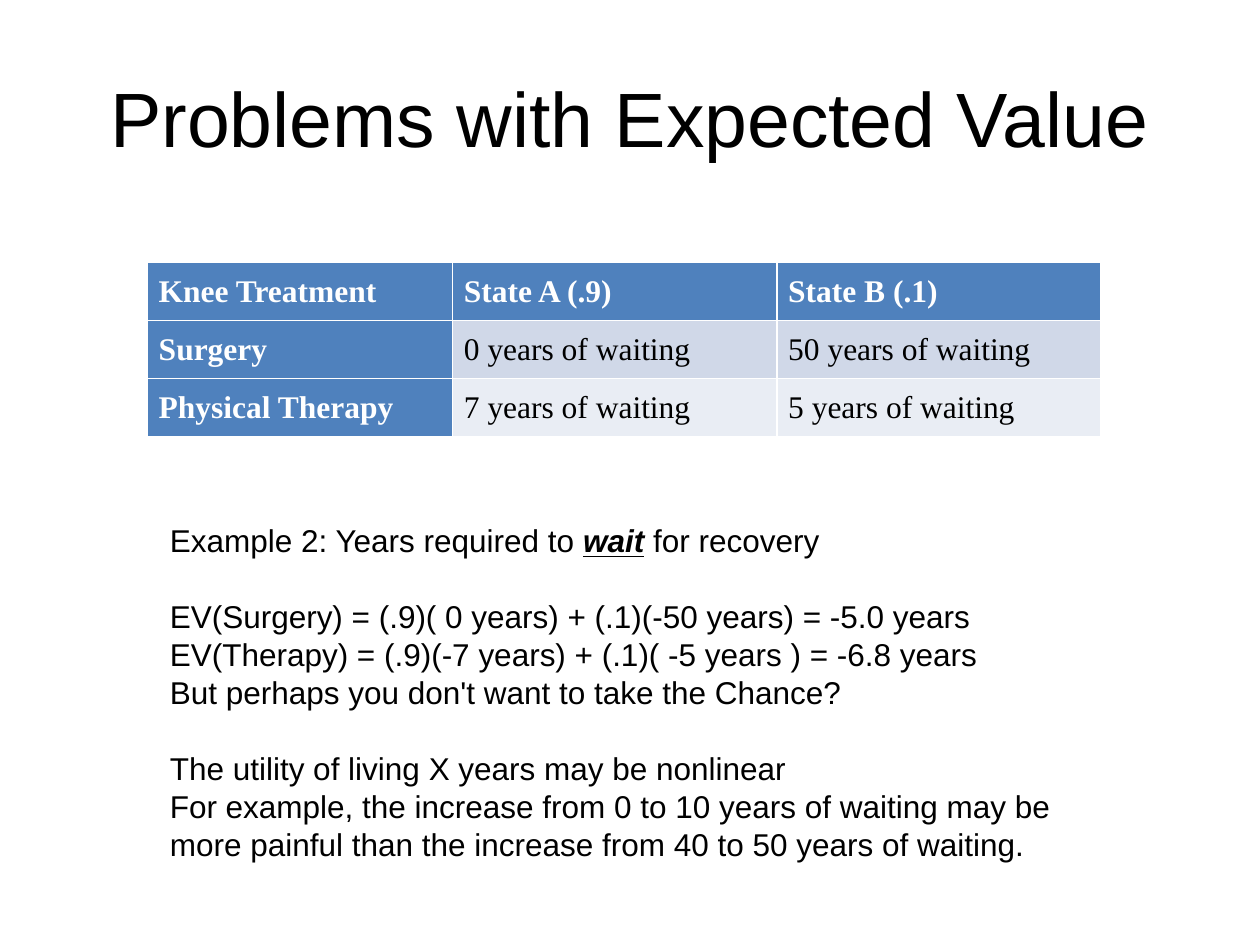
from dataclasses import dataclass

from pptx import Presentation
from pptx import util as u
from pptx.dml import color
from pptx.enum import text


@dataclass(frozen=True)
class Theme:
    ink: str = "000000"
    light: str = "FFFFFF"
    accent: str = "4F81BD"
    bands: tuple = ("D0D8E8", "E9EDF4")
    sans: str = "Arial"
    serif: str = "Times New Roman"
    title_size: int = 44
    text_size: int = 18
    line_height: float = 21.7


THEME = Theme()
WIDTH, HEIGHT = u.Inches(10), u.Inches(7.5)

TREATMENTS = [
    ["Knee Treatment", "State A (.9)", "State B (.1)"],
    ["Surgery", "0 years of waiting", "50 years of waiting"],
    ["Physical Therapy", "7 years of waiting", "5 years of waiting"],
]
COLUMN_SHARES = (0.32, 0.34, 0.34)

ARGUMENT = [
    [["Example 2: Years required to ", ("wait", {"bold": True, "italic": True, "underline": True}),
      " for recovery"]],
    [["EV(Surgery) = (.9)( 0 years) + (.1)(-50 years) = -5.0 years"],
     ["EV(Therapy) = (.9)(-7 years) + (.1)( -5 years ) = -6.8 years"],
     ["But perhaps you don't want to take the Chance?"]],
    [["The utility of living X years may be nonlinear"],
     ["For example, the increase from 0 to 10 years of waiting may be"],
     ["more painful than the increase from 40 to 50 years of waiting."]],
]


def area(left, top, width, height):
    return (int(left * WIDTH), int(top * HEIGHT), int(width * WIDTH), int(height * HEIGHT))


def apply(target, values):
    for name, value in values.items():
        setattr(target, name, value)


def write(para, words, ink, **values):
    span = para.add_run()
    span.text = words
    apply(span.font, values)
    span.font.color.rgb = color.RGBColor.from_string(ink)


def fill_title(page, box):
    title = page.shapes.title
    apply(title, dict(zip(("left", "top", "width", "height"), box)))
    title.text_frame.vertical_anchor = text.MSO_ANCHOR.MIDDLE
    para = title.text_frame.paragraphs[0]
    para.alignment = text.PP_ALIGN.CENTER
    write(para, "Problems with Expected Value", THEME.ink,
          name=THEME.sans, size=u.Pt(THEME.title_size))


def add_treatment_table(page, box):
    table = page.shapes.add_table(len(TREATMENTS), len(COLUMN_SHARES), *box).table
    table.first_col = True
    for column, share in zip(table.columns, COLUMN_SHARES):
        column.width = int(box[2] * share)
    margins = dict.fromkeys(
        ("margin_left", "margin_top", "margin_right", "margin_bottom"), u.Inches(0.09))
    for r, row in enumerate(TREATMENTS):
        for c, words in enumerate(row):
            cell = table.cell(r, c)
            heading = r == 0 or c == 0
            apply(cell, margins)
            cell.fill.solid()
            cell.fill.fore_color.rgb = color.RGBColor.from_string(
                THEME.accent if heading else THEME.bands[r - 1])
            write(cell.text_frame.paragraphs[0], words,
                  THEME.light if heading else THEME.ink,
                  name=THEME.serif, size=u.Pt(THEME.text_size), bold=heading)


def add_argument(page, box):
    frame = page.shapes.add_textbox(*box).text_frame
    apply(frame, {"word_wrap": True, "vertical_anchor": text.MSO_ANCHOR.MIDDLE})
    lines = [(line, g > 0 and n == 0)
             for g, group in enumerate(ARGUMENT) for n, line in enumerate(group)]
    for index, (line, opens_group) in enumerate(lines):
        para = frame.add_paragraph() if index else frame.paragraphs[0]
        apply(para, {"line_spacing": u.Pt(THEME.line_height),
                     "space_before": u.Pt(THEME.line_height if opens_group else 0)})
        for part in line:
            words, emphasis = (part, {}) if isinstance(part, str) else part
            write(para, words, THEME.ink,
                  name=THEME.sans, size=u.Pt(THEME.text_size), **emphasis)


def main():
    deck = Presentation()
    apply(deck, {"slide_width": WIDTH, "slide_height": HEIGHT})
    page = deck.slides.add_slide(deck.slide_layouts.get_by_name("Title Only"))
    fill_title(page, area(0.05, 0.04, 0.9, 1 / 6))
    add_treatment_table(page, area(0.117, 0.278, 0.757, 0.184))
    add_argument(page, area(0.125, 0.544, 0.726, 0.377))
    deck.save("out.pptx")


if __name__ == "__main__":
    main()
